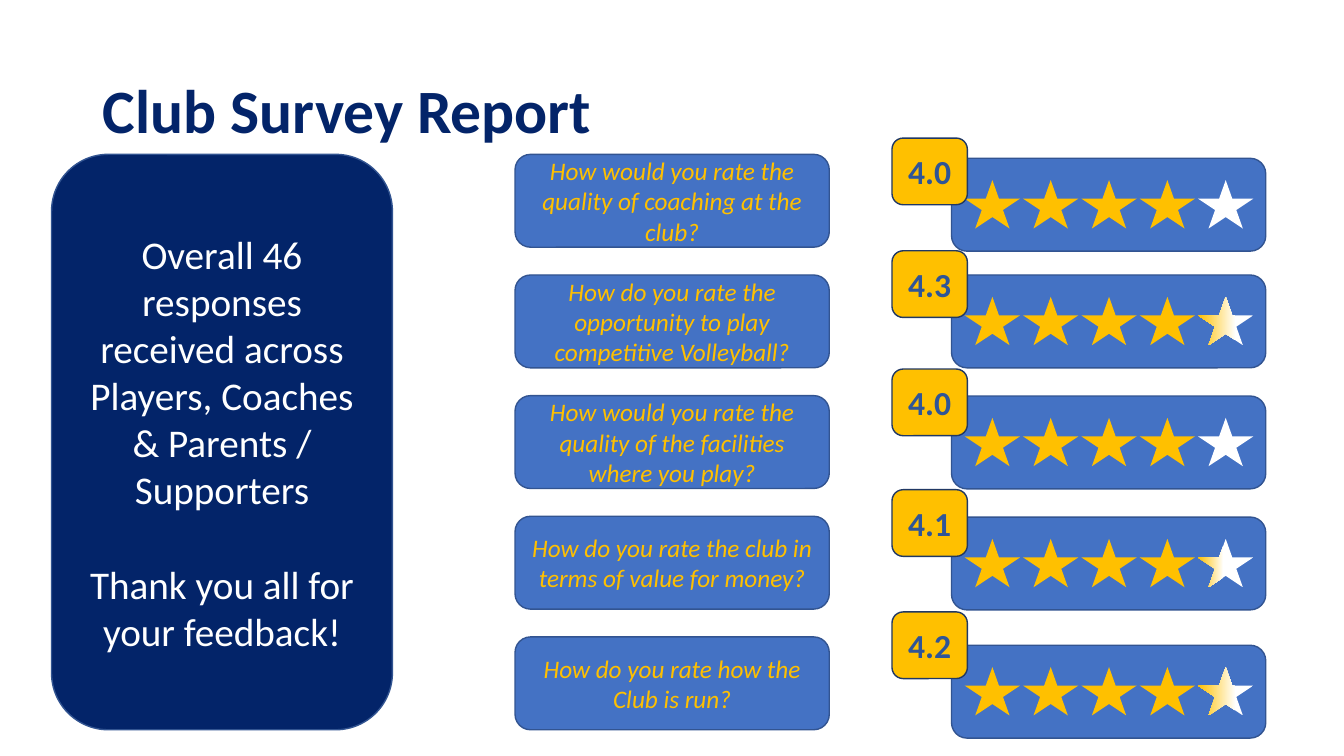
from pptx import Presentation, util as u
from pptx.dml.color import RGBColor
from pptx.enum import shapes, text

COLORS = {
    "navy": "032469", "blue": "4472C4", "edge": "325491", "gold": "FFC000",
    "badge_edge": "203864", "score": "2F5597", "white": "FFFFFF",
}
FORMATS = {
    "title": {"size": u.Pt(44), "bold": True},
    "summary": {"size": u.Pt(28)},
    "question": {"size": u.Pt(18), "italic": True},
    "score": {"size": u.Pt(24), "bold": True},
}
SUMMARY = [
    "Overall 46 responses received across Players, Coaches & Parents / Supporters",
    "Thank you all for your feedback!",
]
RATINGS = [
    ("How would you rate the quality of coaching at the club?", "4.0", 3.99, 3.48, None),
    ("How do you rate the opportunity to play competitive Volleyball?", "4.3", 6.93, 6.32, 0.32),
    ("How would you rate the quality of the facilities where you play?", "4.0", 9.98, 9.3, None),
    ("How do you rate the club in terms of value for money?", "4.1", 13.03, 12.34, 0.54),
    ("How do you rate how the Club is run?", "4.2", 16.26, 15.42, 0.32),
]
STAR_COUNT = 5
STAR_PITCH = 1.47
QUESTION_TOP = 3.89
QUESTION_PITCH = 3.04


class SurveySlide:
    """Draws the survey elements on one slide in a shared style."""

    font_name = "Calibri"

    def __init__(self, presentation):
        self.slide = presentation.slides.add_slide(presentation.slide_layouts[5])

    def color(self, name):
        return RGBColor.from_string(COLORS[name])

    def fill_paragraph(self, paragraph, wording, style, color, alignment=text.PP_ALIGN.CENTER):
        paragraph.text = wording
        paragraph.alignment = alignment
        paragraph.font.name = self.font_name
        paragraph.font.color.rgb = self.color(color)
        for attribute, value in FORMATS[style].items():
            setattr(paragraph.font, attribute, value)

    def title(self, wording, left, top, width, height):
        title = self.slide.shapes.title
        box = {"left": left, "top": top, "width": width, "height": height}
        for attribute, value in box.items():
            setattr(title, attribute, u.Cm(value))
        title.text_frame.vertical_anchor = text.MSO_ANCHOR.MIDDLE
        paragraph = title.text_frame.paragraphs[0]
        self.fill_paragraph(paragraph, wording, "title", "navy", text.PP_ALIGN.LEFT)
        paragraph.line_spacing = 0.9

    def shape(self, kind, box, fill, line=None, parent=None):
        container = (parent or self.slide).shapes
        shape = container.add_shape(kind, *(u.Cm(length) for length in box))
        shape.shadow.inherit = False
        shape.fill.solid()
        shape.fill.fore_color.rgb = self.color(fill)
        if line:
            shape.line.color.rgb = self.color(line)
            shape.line.width = u.Pt(1)
        else:
            shape.line.fill.background()
        return shape

    def card(self, box, fill, line="edge", parent=None):
        return self.shape(shapes.MSO_SHAPE.ROUNDED_RECTANGLE, box, fill, line, parent)

    def text_card(self, box, fill, wordings, style, color, line="edge", gap=0):
        frame = self.card(box, fill, line).text_frame
        frame.word_wrap = True
        frame.vertical_anchor = text.MSO_ANCHOR.MIDDLE
        for index, wording in enumerate(wordings):
            paragraph = frame.add_paragraph() if index else frame.paragraphs[0]
            self.fill_paragraph(paragraph, wording, style, color)
            if index:
                paragraph.space_before = u.Pt(gap)

    def star_panel(self, top, white_until):
        group = self.slide.shapes.add_group_shape()
        self.card((23.98, top, 7.92, 2.34), "blue", parent=group)
        for index in range(STAR_COUNT):
            box = (24.31 + index * STAR_PITCH, top + 0.55, 1.4, 1.22)
            is_last = index == STAR_COUNT - 1
            star = self.shape(shapes.MSO_SHAPE.STAR_5_POINT, box,
                              "white" if is_last else "gold", parent=group)
            if is_last and white_until:
                self.part_fill(star, white_until)

    def part_fill(self, star, white_until):
        star.fill.gradient()
        star.fill.gradient_angle = 180
        stops = (("white", white_until), ("gold", 1))
        for stop, (color, position) in zip(star.fill.gradient_stops, stops):
            stop.color.rgb = self.color(color)
            stop.position = position


def main():
    presentation = Presentation()
    presentation.slide_width = u.Cm(33.87)
    presentation.slide_height = u.Cm(19.05)
    survey = SurveySlide(presentation)
    survey.title("Club Survey Report", 2.34, 1.02, 29.21, 3.68)
    for index, (question, score, panel_top, badge_top, white_until) in enumerate(RATINGS):
        question_box = (12.98, QUESTION_TOP + index * QUESTION_PITCH, 7.92, 2.34)
        survey.text_card(question_box, "blue", [question], "question", "gold")
        survey.star_panel(panel_top, white_until)
        survey.text_card((22.48, badge_top, 1.9, 1.68), "gold", [score],
                         "score", "score", "badge_edge")
    survey.text_card((1.3, QUESTION_TOP, 8.59, 14.5), "navy", SUMMARY,
                     "summary", "white", gap=34)
    presentation.save("out.pptx")


if __name__ == "__main__":
    main()
